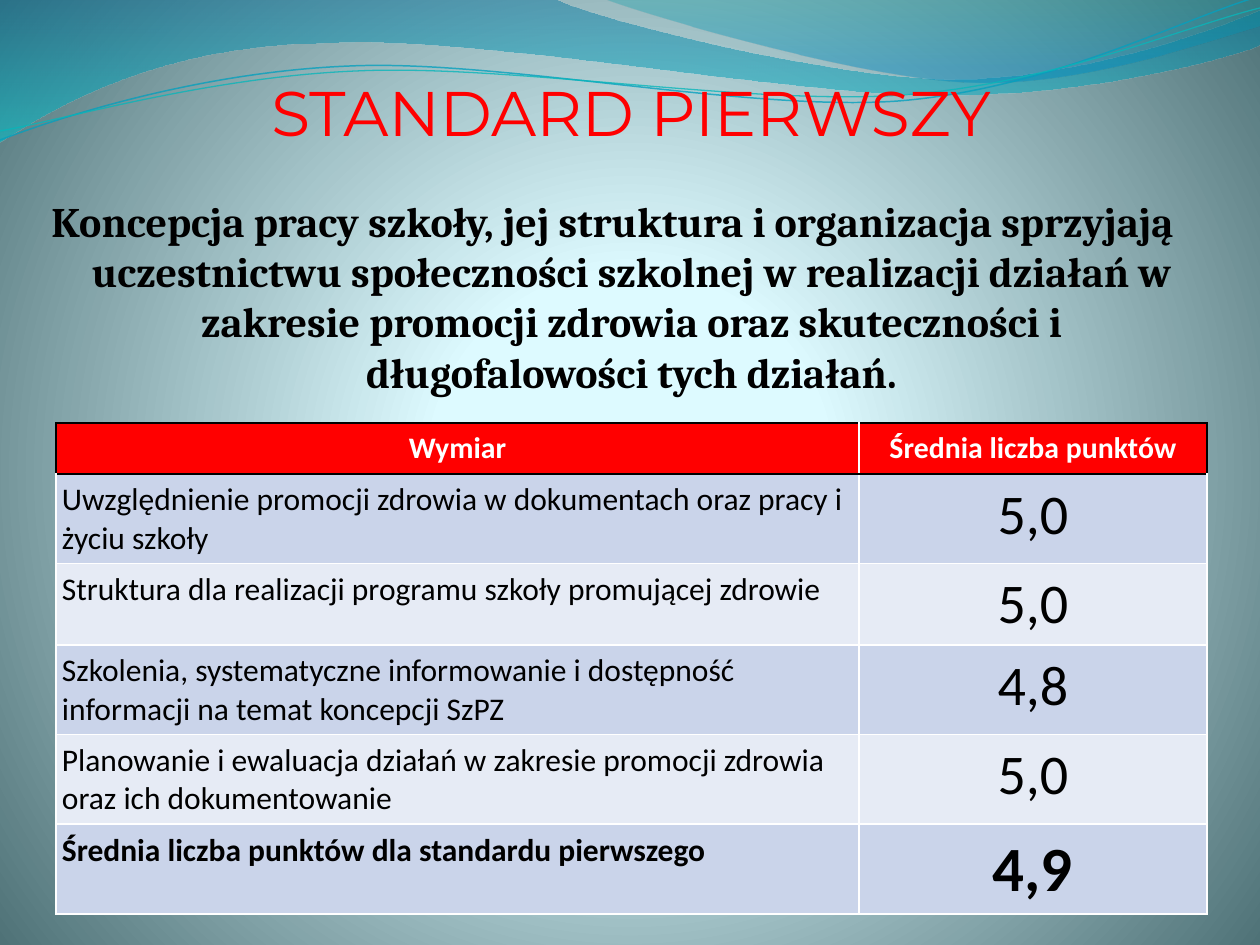
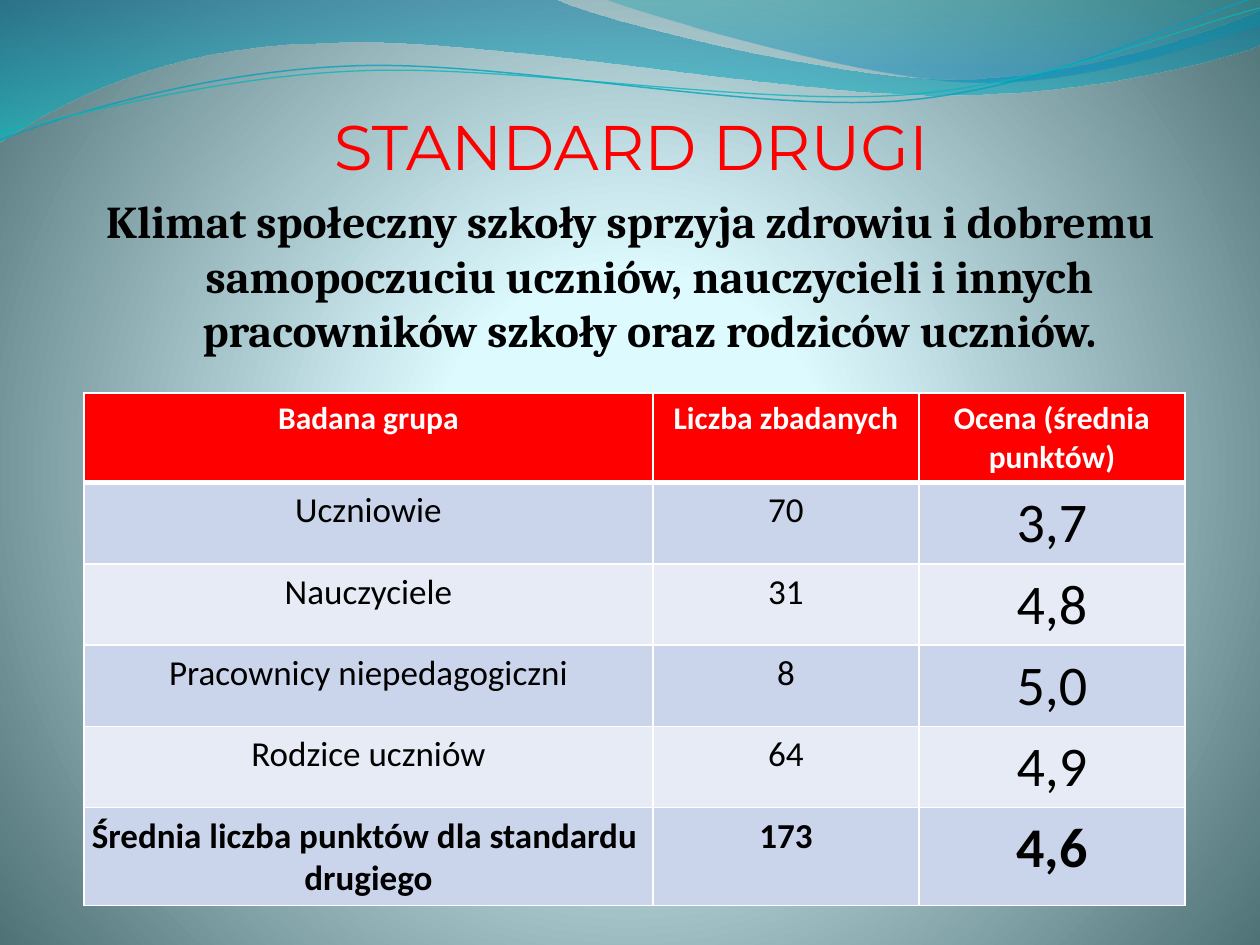
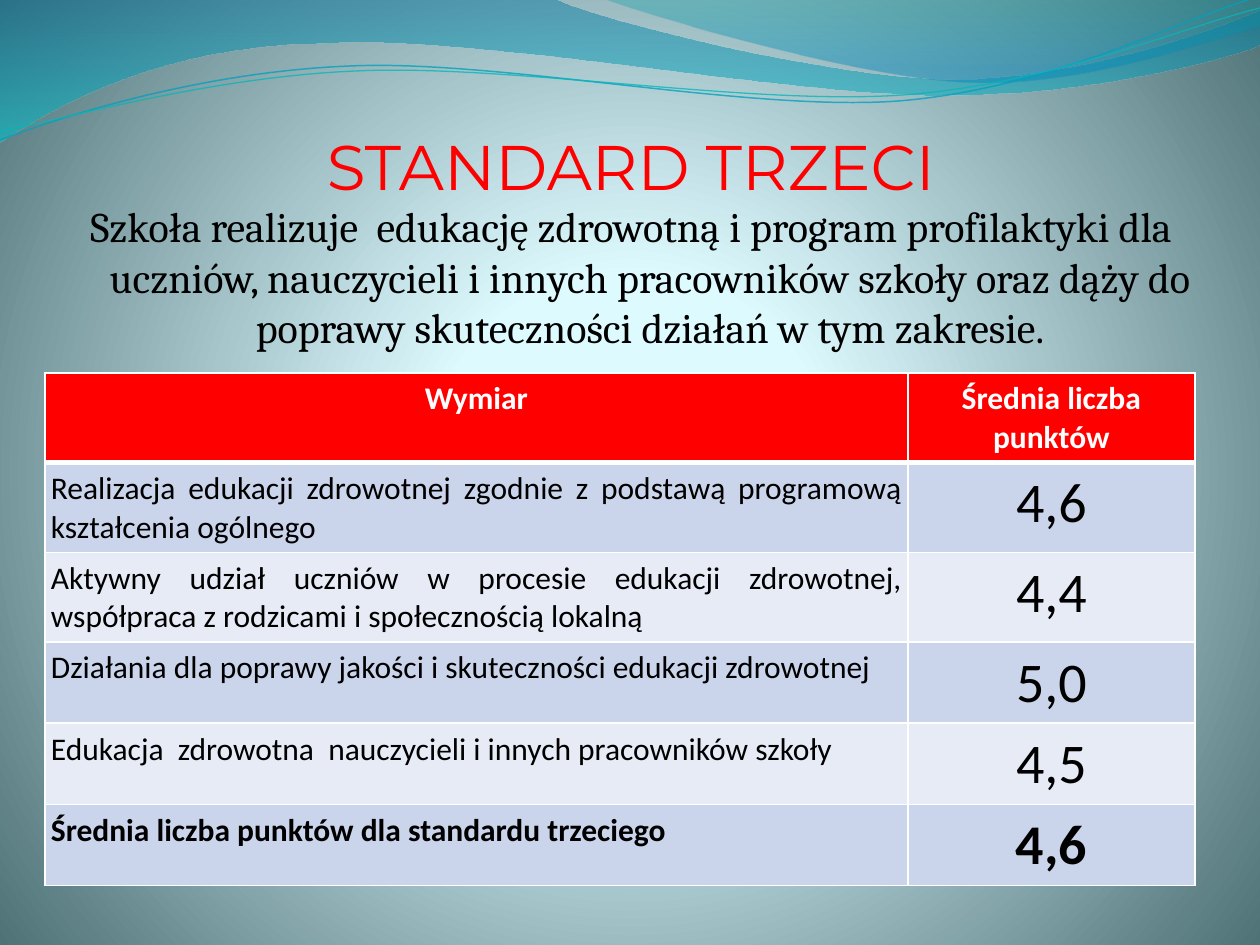
from lxml import etree
from pptx import Presentation
from pptx import util as u
from pptx.dml.color import RGBColor
from pptx.enum import text
from pptx.oxml import parse_xml
from pptx.oxml.ns import nsdecls, qn

# Shared look
PX = 914400 / 126
RED, BLACK, WHITE = "FF0000", "000000", "FFFFFF"
BANDS = ("CAD4EA", "E6EBF5")
INSET, CELL_TOP = 6, 7
ROW_HEIGHT = 51
LEFT, CENTER, JUSTIFY = (text.PP_ALIGN.LEFT, text.PP_ALIGN.CENTER,
                         text.PP_ALIGN.JUSTIFY)

CIRCLE = ('<a:path path="circle"><a:fillToRect l="50000" t="50000" '
          'r="50000" b="50000"/></a:path>')
DOWNWARD = '<a:lin ang="5400000" scaled="0"/>'
BACKDROP = [(0, "DEFBFF", 100), (25, "DDFAFF", 100), (100, "4F7277", 100)]

# Outlines: a step of one point is a straight line, of three a curve
WAVES = [
    {"stops": [(0, "00739E", 45), (100, "00C5CE", 55)],
     "steps": [[(0, 0)], [(554, -1)],
               [(600, 21), (837, 79), (955, 79)],
               [(1075, 79), (1207, 33), (1260, 11)], [(1261, 45)],
               [(1239, 55), (1096, 96), (940, 95)],
               [(781, 95), (481, 35), (324, 43)],
               [(161, 45), (58, 105), (-1, 142)]]},
    {"stops": [(0, "009FA6", 30), (80, "008ABE", 45)],
     "steps": [[(604, -1)],
               [(641, 14), (859, 78), (969, 82)],
               [(1079, 87), (1211, 40), (1260, 26)], [(1260, 0)]]},
]
STRANDS = [
    {"color": "05A0BE", "width": 0.85,
     "steps": [[(0, 140)],
               [(60, 117), (199, 72), (349, 66)],
               [(498, 59), (747, 112), (898, 101)],
               [(1050, 89), (1182, 19), (1257, -3)]]},
    {"color": "08B6BA", "width": 0.75,
     "steps": [[(0, 131)],
               [(59, 121), (207, 77), (357, 71)],
               [(508, 64), (752, 106), (903, 95)],
               [(1053, 84), (1186, 26), (1260, 8)]]},
]

# Content of the slides
STANDARDS = [
    {"title": "STANDARD PIERWSZY", "title_top": -8,
     "body": "Koncepcja pracy szkoły, jej struktura i organizacja sprzyjają "
             "uczestnictwu społeczności szkolnej w realizacji działań "
             "w zakresie promocji zdrowia oraz skuteczności "
             "i długofalowości tych działań.",
     "body_box": (45, 189, 1135, 714), "size": 24, "bold": True, "before": 5,
     "table_at": (56, 423), "columns": (803, 348), "align": LEFT,
     "sizes": {"head": 17, "label": 18, "score": 32, "total": 36},
     "frame": (BLACK, 1),
     "rows": [
         ("Wymiar", "Średnia liczba punktów"),
         ("Uwzględnienie promocji zdrowia w dokumentach oraz pracy i życiu "
          "szkoły", "5,0"),
         ("Struktura dla realizacji programu szkoły promującej zdrowie",
          "5,0"),
         ("Szkolenia, systematyczne informowanie i dostępność informacji "
          "na temat koncepcji SzPZ", "4,8"),
         ("Planowanie i ewaluacja działań w zakresie promocji zdrowia oraz "
          "ich dokumentowanie", "5,0"),
         ("Średnia liczba punktów dla standardu pierwszego", "4,9")]},
    {"title": "STANDARD DRUGI", "title_top": 26,
     "body": "Klimat społeczny szkoły sprzyja zdrowiu i dobremu samopoczuciu "
             "uczniów, nauczycieli i innych pracowników szkoły oraz rodziców "
             "uczniów.",
     "body_box": (64, 187, 1134, 728), "size": 26, "bold": True, "before": 6,
     "table_at": (84, 393), "columns": (569, 266, 266), "align": CENTER,
     "sizes": {"head": 18, "label": 20, "score": 32, "total": 32},
     "frame": (WHITE, 3),
     "rows": [
         ("Badana grupa", "Liczba zbadanych", "Ocena (średnia punktów)"),
         ("Uczniowie", "70", "3,7"),
         ("Nauczyciele", "31", "4,8"),
         ("Pracownicy niepedagogiczni", "8", "5,0"),
         ("Rodzice uczniów", "64", "4,9"),
         ("Średnia liczba punktów dla standardu  drugiego", "173", "4,6")]},
    {"title": "STANDARD TRZECI", "title_top": 46,
     "body": "Szkoła realizuje  edukację zdrowotną i program profilaktyki "
             "dla uczniów, nauczycieli i innych pracowników szkoły oraz dąży "
             "do poprawy skuteczności działań w tym zakresie.",
     "body_box": (64, 195, 1134, 605), "size": 24, "bold": False, "before": 5,
     "table_at": (45, 373), "columns": (863, 287), "align": JUSTIFY,
     "sizes": {"head": 18, "label": 18, "score": 32, "total": 32},
     "frame": (WHITE, 3),
     "rows": [
         ("Wymiar", "Średnia liczba punktów"),
         ("Realizacja edukacji zdrowotnej zgodnie z podstawą programową "
          "kształcenia ogólnego", "4,6"),
         ("Aktywny udział uczniów w procesie edukacji zdrowotnej, współpraca "
          "z rodzicami i społecznością lokalną", "4,4"),
         ("Działania dla poprawy jakości i skuteczności edukacji zdrowotnej",
          "5,0"),
         ("Edukacja  zdrowotna  nauczycieli i innych pracowników szkoły",
          "4,5"),
         ("Średnia liczba punktów dla standardu trzeciego", "4,6")]},
]


def px(length):
    return u.Emu(round(length * PX))


def color(value):
    return RGBColor.from_string(value)


def set_gradient(fill, holder, stops, direction):
    """Give the holder a gradient with per-stop opacity."""
    fill.gradient()
    listed = "".join(
        f'<a:gs pos="{place * 1000}"><a:srgbClr val="{value}">'
        f'<a:alpha val="{opacity * 1000}"/></a:srgbClr></a:gs>'
        for place, value, opacity in stops)
    gradient = parse_xml(f'<a:gradFill {nsdecls("a")} rotWithShape="1">'
                         f'<a:gsLst>{listed}</a:gsLst>{direction}</a:gradFill>')
    holder.replace(holder.find(qn("a:gradFill")), gradient)


def add_outline(page, steps, close):
    """Build the outline from its corners, then bend the curved sides."""
    corners = [(px(step[-1][0]), px(step[-1][1])) for step in steps]
    builder = page.shapes.build_freeform(*corners[0])
    builder.add_line_segments(corners[1:], close=close)
    shape = builder.convert_to_shape()
    shape.shadow.inherit = False
    sides = list(shape.element.spPr.iter(qn("a:lnTo")))
    for side, step in zip(sides, steps[1:]):
        if len(step) == 3:
            points = "".join(f'<a:pt x="{px(x) - shape.left}" '
                             f'y="{px(y) - shape.top}"/>' for x, y in step)
            curve = parse_xml(f'<a:cubicBezTo {nsdecls("a")}>{points}'
                              '</a:cubicBezTo>')
            side.getparent().replace(side, curve)
    return shape


def add_waves(page):
    for wave in WAVES:
        shape = add_outline(page, wave["steps"], True)
        shape.line.fill.background()
        set_gradient(shape.fill, shape.element.spPr, wave["stops"], DOWNWARD)
    for strand in STRANDS:
        shape = add_outline(page, strand["steps"], False)
        shape.fill.background()
        shape.line.color.rgb = color(strand["color"])
        shape.line.width = u.Pt(strand["width"])
        tint = shape.element.spPr.find(".//" + qn("a:srgbClr"))
        etree.SubElement(tint, qn("a:alpha"), val="78000")


def write(frame, words, font, size, ink, bold=False, align=CENTER):
    para = frame.paragraphs[0]
    para.text = words
    para.alignment = align
    para.font.name, para.font.size = font, u.Pt(size)
    para.font.bold, para.font.color.rgb = bold, color(ink)
    return para


def set_margins(holder, side, top):
    holder.margin_left = holder.margin_right = px(side)
    holder.margin_top = holder.margin_bottom = px(top)


def add_text_box(page, place, inset):
    frame = page.shapes.add_textbox(*map(px, place)).text_frame
    frame.word_wrap = True
    set_margins(frame, inset, inset)
    return frame


def set_borders(cell, borders):
    properties = cell._tc.get_or_add_tcPr()
    for side in "LRTB":
        value, width = borders.get(side, (WHITE, 1))
        properties.append(parse_xml(
            f'<a:ln{side} {nsdecls("a")} w="{u.Pt(width)}"><a:solidFill>'
            f'<a:srgbClr val="{value}"/></a:solidFill></a:ln{side}>'))


def cell_borders(row, column, last_column, frame):
    """The header row is framed; the row below shares its edge."""
    if row == 1:
        return {"T": frame}
    if row > 1:
        return {}
    borders = {"B": frame}
    if frame[0] == BLACK:
        borders["T"] = frame
        if column == 0:
            borders["L"] = frame
        if column == last_column:
            borders["R"] = frame
    return borders


def add_scores(page, standard):
    rows, columns = standard["rows"], standard["columns"]
    sizes = standard["sizes"]
    last_row, last_column = len(rows) - 1, len(columns) - 1
    place = (*standard["table_at"], sum(columns), ROW_HEIGHT * len(rows))
    table = page.shapes.add_table(len(rows), len(columns),
                                  *map(px, place)).table
    for column, width in zip(table.columns, columns):
        column.width = px(width)
    for r, words in enumerate(rows):
        table.rows[r].height = px(ROW_HEIGHT)
        for c, word in enumerate(words):
            cell = table.cell(r, c)
            set_margins(cell, INSET, CELL_TOP)
            set_borders(cell, cell_borders(r, c, last_column,
                                           standard["frame"]))
            cell.fill.solid()
            cell.fill.fore_color.rgb = color(BANDS[(r - 1) % 2] if r else RED)
            if r == 0:
                size = sizes["head"]
            elif c < last_column:
                size = sizes["label"]
            else:
                size = sizes["total" if r == last_row else "score"]
            align = standard["align"] if r and c == 0 else CENTER
            if r == last_row and align == JUSTIFY:
                align = LEFT
            write(cell.text_frame, word, "Calibri", size,
                  BLACK if r else WHITE, r in (0, last_row), align)


def add_standard(deck, standard):
    page = deck.slides.add_slide(deck.slide_layouts[6])
    add_waves(page)
    # Title
    frame = add_text_box(page, (64, standard["title_top"], 1134, 157), 0)
    frame.vertical_anchor = text.MSO_ANCHOR.BOTTOM
    write(frame, standard["title"], "Montserrat", 36, RED)
    # Wording of the standard, with a hanging indent
    frame = add_text_box(page, standard["body_box"], INSET)
    para = write(frame, standard["body"], "Cambria", standard["size"], BLACK,
                 standard["bold"])
    para.space_before = u.Pt(standard["before"])
    indents = para._p.get_or_add_pPr()
    indents.set("marL", str(px(38)))
    indents.set("indent", str(px(-38)))
    add_scores(page, standard)


def main():
    deck = Presentation()
    deck.slide_width, deck.slide_height = px(1260), px(945)
    master = deck.slide_master
    fill = master.background.fill
    set_gradient(fill, master.element.find(".//" + qn("p:bgPr")),
                 BACKDROP, CIRCLE)
    for standard in STANDARDS:
        add_standard(deck, standard)
    deck.save("out.pptx")


if __name__ == "__main__":
    main()
